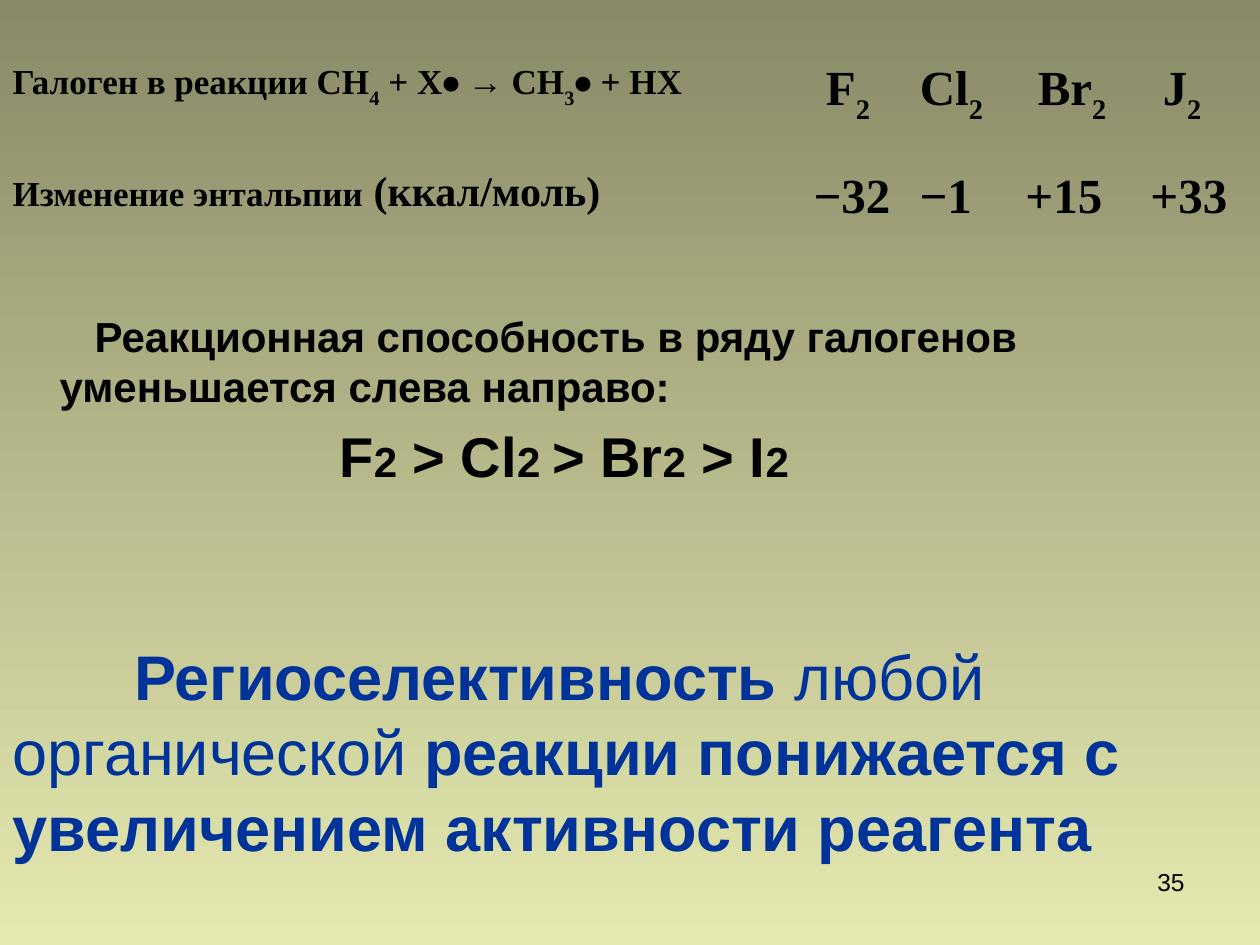
from lxml import etree
from pptx import Presentation, util as u
from pptx.dml.color import RGBColor
from pptx.enum import text
from pptx.oxml.ns import qn

PX = 914400 // 126
COLORS = {"top": "888966", "bottom": "E5E9AF", "black": "000000", "blue": "003399"}
SERIF, SANS, DOT = "Times New Roman", "Arial", "Calibri"


def px(n):
    return u.Emu(n * PX)


def rgb(name):
    return RGBColor.from_string(COLORS[name])


def place(sp, x, y, w, h):
    sp.left, sp.top, sp.width, sp.height = map(px, (x, y, w, h))


def style(p, font, size, color="black", bold=True):
    p.font.name = font
    p.font.size = u.Pt(size)
    p.font.color.rgb = rgb(color)
    p.font.bold = bold


def indent(p, left, first):
    pPr = p._p.get_or_add_pPr()
    pPr.set("marL", str(px(left)))
    pPr.set("indent", str(px(first)))
    pPr.insert_element_before(etree.Element(qn("a:buNone")), "a:tabLst", "a:defRPr", "a:extLst")


def clear_borders(cell):
    tcPr = cell._tc.get_or_add_tcPr()
    for i, side in enumerate(("a:lnL", "a:lnR", "a:lnT", "a:lnB")):
        ln = etree.Element(qn(side), w="0")
        etree.SubElement(ln, qn("a:noFill"))
        tcPr.insert(i, ln)


def add_run(p, words, size=None, font=None, bold=None, sub=False):
    r = p.add_run()
    r.text = words
    if size:
        r.font.size = u.Pt(size)
    if font:
        r.font.name = font
    if bold is not None:
        r.font.bold = bold
    if sub:
        r._r.get_or_add_rPr().set("baseline", "-30000")


def add_background(s):
    fill = s.background.fill
    fill.gradient()
    fill.gradient_angle = 270
    for stop, name, pos in zip(fill.gradient_stops, ("top", "bottom"), (0, 1)):
        stop.color.rgb = rgb(name)
        stop.position = pos


def add_enthalpy_table(s, x, y, w, h):
    halogens = [("F", "−32", 25), ("Cl", "−1", 13), ("Br", "+15", 25), ("J", "+33", 25)]
    table = s.shapes.add_table(2, 5, px(x), px(y), px(w), px(h)).table
    table.first_row = table.horz_banding = False
    for col, width in zip(table.columns, (801, 106, 106, 125, 122)):
        col.width = px(width)
    for row, height in zip(table.rows, (108, h - 108)):
        row.height = px(height)
    for cell in table.iter_cells():
        cell.fill.background()
        clear_borders(cell)
        style(cell.text_frame.paragraphs[0], SERIF, 28)

    p = table.cell(0, 0).text_frame.paragraphs[0]
    style(p, SERIF, 20)
    for words, font, sub in [("Галоген в реакции СН", None, False), ("4", None, True),
                             (" + Х", None, False), ("• ", DOT, False),
                             ("→ СН", None, False), ("3", None, True),
                             ("•", DOT, False), (" + НХ", None, False)]:
        add_run(p, words, font=font, sub=sub)
    p = table.cell(1, 0).text_frame.paragraphs[0]
    add_run(p, "Изменение энтальпии", 20)
    add_run(p, " (ккал/моль)", 24)

    for i, (symbol, value, margin) in enumerate(halogens, 1):
        cell = table.cell(0, i)
        cell.margin_left = px(margin)
        p = cell.text_frame.paragraphs[0]
        add_run(p, symbol)
        add_run(p, "2", sub=True)
        add_run(table.cell(1, i).text_frame.paragraphs[0], value)


def add_reactivity(s, x, y, w, h):
    sp = s.placeholders[1]
    place(sp, x, y, w, h)
    tf = sp.text_frame
    tf.auto_size = text.MSO_AUTO_SIZE.NONE
    p = tf.paragraphs[0]
    style(p, SANS, 24)
    indent(p, 47, 35)
    p.space_before = u.Pt(5)
    add_run(p, "Реакционная способность в ряду галогенов уменьшается слева направо:")
    p = tf.add_paragraph()
    style(p, SANS, 32)
    indent(p, 47, 280)
    p.space_before = u.Pt(6)
    for symbol, digit in [("F", "2"), (" > Cl", "2 "), ("> Br", "2"), (" > I", "2")]:
        add_run(p, symbol)
        add_run(p, digit, 24)


def add_text_box(s, x, y, w, h):
    tf = s.shapes.add_textbox(*map(px, (x, y, w, h))).text_frame
    tf.word_wrap = True
    return tf.paragraphs[0]


def add_conclusion(s, x, y, w, h):
    p = add_text_box(s, x, y, w, h)
    style(p, SANS, 36, "blue")
    indent(p, 0, 122)
    add_run(p, "Региоселективность")
    add_run(p, " любой органической ", bold=False)
    add_run(p, "реакции понижается с увеличением активности реагента")


def add_page_number(s, x, y, w, h):
    p = add_text_box(s, x, y, w, h)
    style(p, SANS, 14, bold=False)
    p.alignment = text.PP_ALIGN.RIGHT
    add_run(p, "35")


def main():
    prs = Presentation()
    prs.slide_width, prs.slide_height = px(1260), px(945)
    s = prs.slides.add_slide(prs.slide_layouts[1])
    title = s.shapes.title._element
    title.getparent().remove(title)
    add_background(s)
    add_page_number(s, 903, 861, 294, 65)
    add_reactivity(s, 0, 304, 1260, 352)
    add_enthalpy_table(s, 0, 55, 1260, 280)
    add_conclusion(s, 0, 631, 1196, 239)
    prs.save("out.pptx")


if __name__ == "__main__":
    main()
